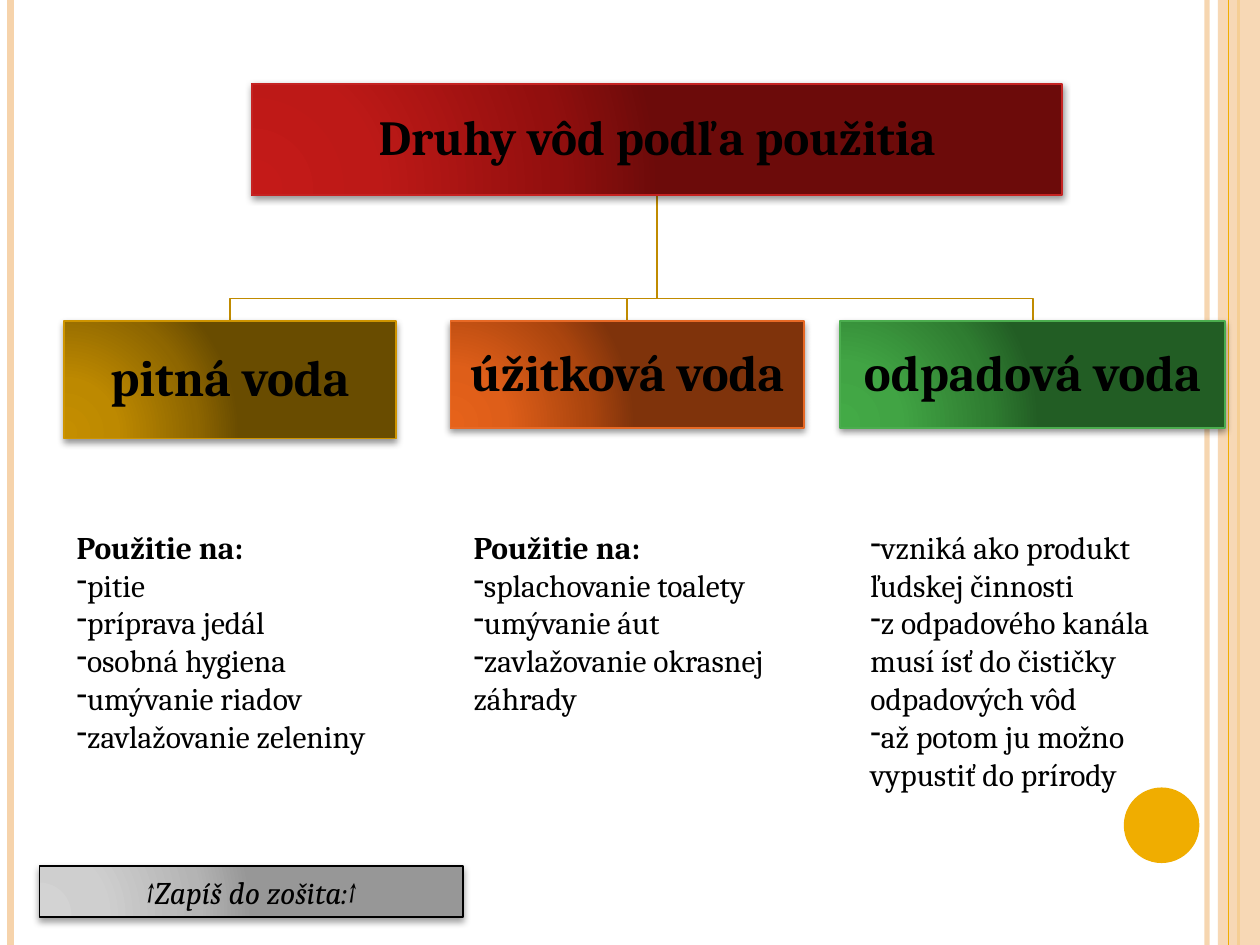
from lxml import etree
from pptx import Presentation
from pptx.dml.color import RGBColor
from pptx.enum import shapes as kinds, text
from pptx.oxml import ns
from pptx.util import Pt

FONT = "Cambria"
COLORS = {
    "peach": "F6D3AB", "amber": "F0AD00", "branch": "C08B00", "black": "000000",
    "red line": "C52322", "gold line": "CE9400",
    "orange line": "E76925", "green line": "4BAD4E",
}
GRADIENTS = {
    "red": ("C41A18", "BD1917", "920F0E", "6C0B0A"),
    "gold": ("C48E00", "BD8900", "8E6600", "694C00"),
    "orange": ("E6621A", "DE5E19", "AB450E", "7F330B"),
    "green": ("43AA46", "41A444", "2F7D31", "225D24"),
    "grey": ("D3D3D3", "CFCFCF", "B4B4B4", "979797"),
}
STOPS = (0, 30, 75, 100)

SLIDE_W, SLIDE_H = 720, 540
ROOT = ("Druhy vôd podľa použitia", 144, 48, 463, 63.5)
NODE_TOP, BRANCH_Y = 183.6, 170.6
NODES = [  # label, left, width, height, colour
    ("pitná voda", 36.7, 189.5, 67, "gold"),
    ("úžitková voda", 257.5, 202, 61.2, "orange"),
    ("odpadová voda", 480.2, 219.8, 61.2, "green"),
]
USES = "Použitie na:"
DETAILS = [  # heading, height, items
    (USES, 138.2, ["pitie", "príprava jedál", "osobná hygiena", "umývanie riadov",
                   "zavlažovanie zeleniny"]),
    (USES, 116.6, ["splachovanie toalety", "umývanie áut",
                   "zavlažovanie okrasnej záhrady"]),
    (None, 159.8, ["vzniká ako produkt ľudskej činnosti",
                   "z odpadového kanála musí ísť do čističky odpadových vôd",
                   "až potom ju možno vypustiť do prírody"]),
]
DETAIL_LEFT, DETAIL_STEP, DETAIL_TOP, DETAIL_W = 36.7, 226.8, 298, 209.5


def rgb(name):
    return RGBColor.from_string(COLORS[name])


def add_child(parent, tag, **attributes):
    child = etree.SubElement(parent, ns.qn(tag))
    for key, value in attributes.items():
        child.set(key, str(value))
    return child


def set_opacity(color_format_parent, percent):
    """Make the solid fill below the given element partly transparent."""
    color = color_format_parent.find(ns.qn("a:solidFill"))[0]
    add_child(color, "a:alpha", val=percent * 1000)


def set_gradient(shape, colors):
    """Radial gradient spreading from the lower left."""
    shape.fill.gradient()
    gradient = shape._element.spPr.find(ns.qn("a:gradFill"))
    for child in list(gradient):
        gradient.remove(child)
    stops = add_child(gradient, "a:gsLst")
    for position, color in zip(STOPS, colors):
        stop = add_child(stops, "a:gs", pos=position * 1000)
        add_child(stop, "a:srgbClr", val=color)
    radial = add_child(gradient, "a:path", path="circle")
    add_child(radial, "a:fillToRect", l=5000, t=100000, r=120000, b=10000)


def set_shadow(shape, distance, opacity):
    shape.shadow.inherit = False
    effects = shape._element.spPr.find(ns.qn("a:effectLst"))
    shadow = add_child(effects, "a:outerShdw", blurRad=Pt(4), dist=Pt(distance),
                       dir=5400000, rotWithShape=0)
    color = add_child(shadow, "a:srgbClr", val=COLORS["black"])
    add_child(color, "a:alpha", val=opacity * 1000)


def style_paragraph(paragraph, size, bold=False, italic=False):
    font = paragraph.font
    font.name, font.size = FONT, Pt(size)
    font.bold, font.italic = bold, italic
    font.color.rgb = rgb("black")


def add_stripe(slide, x, width, color, opacity=100):
    """Vertical line over the full slide height."""
    stripe = slide.shapes.add_connector(
        kinds.MSO_CONNECTOR.STRAIGHT, Pt(x), 0, Pt(x), Pt(SLIDE_H))
    stripe.line.width = Pt(width)
    stripe.line.color.rgb = rgb(color)
    if opacity < 100:
        set_opacity(stripe.line._ln, opacity)
    add_child(stripe._element.spPr, "a:effectLst")


def add_plain(slide, preset, left, top, width, height, color):
    plain = slide.shapes.add_shape(preset, Pt(left), Pt(top), Pt(width), Pt(height))
    plain.shadow.inherit = False
    plain.fill.solid()
    plain.fill.fore_color.rgb = rgb(color)
    plain.line.fill.background()
    return plain


def add_frame(slide):
    add_stripe(slide, 689.8, 3, "peach", 93)
    add_stripe(slide, 6, 4.5, "peach")
    add_stripe(slide, 707.8, 1.5, "amber")
    band = add_plain(slide, kinds.MSO_SHAPE.RECTANGLE, 696, 0, 24, SLIDE_H, "peach")
    set_opacity(band._element.spPr, 87)
    add_stripe(slide, 702, 0.75, "amber")
    add_plain(slide, kinds.MSO_SHAPE.OVAL, 642.2, 450, 43.2, 43.2, "amber")


def add_branch(slide, start_x, start_y, end_x):
    builder = slide.shapes.build_freeform(Pt(start_x), Pt(start_y))
    corners = [(start_x, BRANCH_Y), (end_x, BRANCH_Y), (end_x, NODE_TOP)]
    builder.add_line_segments([(Pt(x), Pt(y)) for x, y in corners], close=False)
    branch = builder.convert_to_shape()
    branch.shadow.inherit = False
    branch.fill.background()
    branch.line.color.rgb = rgb("branch")
    branch.line.width = Pt(1)


def add_box(slide, label, left, top, width, height, gradient, line, size,
            bold=True, italic=False, shadow=(1.6, 42)):
    box = slide.shapes.add_shape(kinds.MSO_SHAPE.RECTANGLE,
                                 Pt(left), Pt(top), Pt(width), Pt(height))
    set_gradient(box, GRADIENTS[gradient])
    box.line.color.rgb = rgb(line)
    box.line.width = Pt(1)
    set_shadow(box, *shadow)
    frame = box.text_frame
    frame.word_wrap = True
    frame.vertical_anchor = text.MSO_ANCHOR.MIDDLE
    frame.margin_left = frame.margin_right = Pt(1.5)
    frame.margin_top = frame.margin_bottom = Pt(1.5)
    paragraph = frame.paragraphs[0]
    paragraph.text = label
    paragraph.alignment = text.PP_ALIGN.CENTER
    paragraph.line_spacing = 0.9 if bold else 1
    style_paragraph(paragraph, size, bold, italic)


def add_details(slide, left, height, heading, items):
    details = slide.shapes.add_textbox(Pt(left), Pt(DETAIL_TOP), Pt(DETAIL_W), Pt(height))
    frame = details.text_frame
    frame.word_wrap = True
    lines = ([heading] if heading else []) + items
    for index, line in enumerate(lines):
        paragraph = frame.add_paragraph() if index else frame.paragraphs[0]
        paragraph.text = line
        is_heading = line == heading
        style_paragraph(paragraph, 18, bold=is_heading)
        if not is_heading:
            properties = paragraph._p.get_or_add_pPr()
            properties.set("marL", "0")
            properties.set("indent", "0")
            bullet = etree.Element(ns.qn("a:buChar"), char="-")
            properties.insert(0, bullet)


def main():
    presentation = Presentation()
    presentation.slide_width, presentation.slide_height = Pt(SLIDE_W), Pt(SLIDE_H)
    slide = presentation.slides.add_slide(presentation.slide_layouts[6])
    add_frame(slide)

    title, left, top, width, height = ROOT
    for _, node_left, node_width, _, _ in reversed(NODES):
        add_branch(slide, left + width / 2, top + height, node_left + node_width / 2)
    add_box(slide, title, left, top, width, height, "red", "red line", 28)
    for label, left, width, height, color in NODES:
        add_box(slide, label, left, NODE_TOP, width, height, color, f"{color} line", 29)

    for column, (heading, height, items) in enumerate(DETAILS):
        add_details(slide, DETAIL_LEFT + column * DETAIL_STEP, height, heading, items)
    add_box(slide, "↑Zapíš do zošita:↑", 22.5, 495, 242, 29, "grey", "black", 18,
            bold=False, italic=True, shadow=(2, 40))
    presentation.save("out.pptx")


if __name__ == "__main__":
    main()
